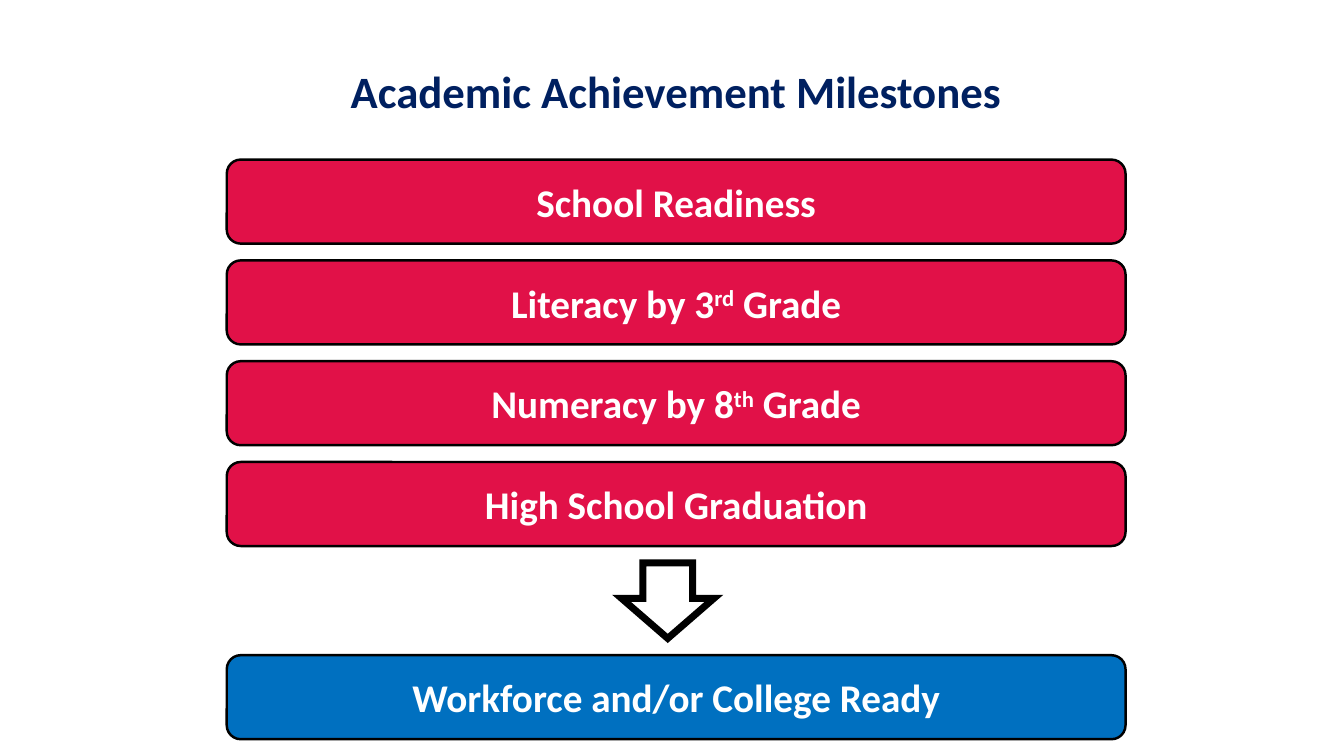
from dataclasses import dataclass

import pptx
import pptx.dml.color
import pptx.enum.shapes
import pptx.enum.text
import pptx.oxml
import pptx.oxml.ns
import pptx.shapes.autoshape
import pptx.slide
import pptx.text.text
import pptx.util

EMU_PER_PX = 9525


@dataclass(frozen=True)
class Theme:
    font: str = "Calibri"
    title_size: int = 32
    bar_size: int = 28
    title_color: str = "002060"
    bar_text: str = "FFFFFF"
    milestone: str = "E11148"
    goal: str = "0070C0"
    outline: str = "000000"
    bar_line: float = 1.75
    arrow_line: float = 5


@dataclass(frozen=True)
class Box:
    left: int
    top: int
    width: int
    height: int

    def emu(self) -> list[int]:
        return [px(value) for value in (self.left, self.top, self.width, self.height)]


@dataclass(frozen=True)
class Bar:
    top: int
    fill: str
    text: str
    ordinal: str = ""
    ending: str = ""


THEME = Theme()

# Column shared by the title and the bars
LEFT, WIDTH = 216, 856
BAR_HEIGHT, FIRST_TOP, STEP = 80, 152, 96
GOAL_TOP = 624
TITLE_BOX = Box(LEFT, 56, WIDTH, 60)
ARROW_BOX = Box(592, 536, 88, 72)

MILESTONES = [
    ("School Readiness",),
    ("Literacy by 3", "rd", " Grade"),
    ("Numeracy by 8", "th", " Grade"),
    ("High School Graduation",),
]
BARS = [
    Bar(FIRST_TOP + index * STEP, THEME.milestone, *words)
    for index, words in enumerate(MILESTONES)
] + [Bar(GOAL_TOP, THEME.goal, "Workforce and/or College Ready")]


def px(value: int) -> int:
    return pptx.util.Emu(value * EMU_PER_PX)


def rgb(color: str) -> pptx.dml.color.RGBColor:
    return pptx.dml.color.RGBColor.from_string(color)


def add_run(paragraph: pptx.text.text._Paragraph, text: str, size: int,
            color: str, baseline: int = 0) -> None:
    run = paragraph.add_run()
    run.text = text
    run.font.name = THEME.font
    run.font.size = pptx.util.Pt(size)
    run.font.bold = True
    run.font.color.rgb = rgb(color)
    if baseline:
        run.font._element.set("baseline", str(baseline * 1000))


def add_outlined_shape(slide: pptx.slide.Slide, kind: pptx.enum.shapes.MSO_SHAPE,
                       box: Box, line_width: float) -> pptx.shapes.autoshape.Shape:
    shape = slide.shapes.add_shape(kind, *box.emu())
    shape.shadow.inherit = False
    shape.line.color.rgb = rgb(THEME.outline)
    shape.line.width = pptx.util.Pt(line_width)
    return shape


def add_title(slide: pptx.slide.Slide) -> None:
    title = slide.shapes.title
    title.left, title.top, title.width, title.height = TITLE_BOX.emu()
    frame = title.text_frame
    frame.word_wrap = True
    frame.auto_size = pptx.enum.text.MSO_AUTO_SIZE.NONE
    frame.vertical_anchor = pptx.enum.text.MSO_ANCHOR.TOP
    paragraph = frame.paragraphs[0]
    paragraph.alignment = pptx.enum.text.PP_ALIGN.CENTER
    add_run(paragraph, "Academic Achievement Milestones",
            THEME.title_size, THEME.title_color)


def add_bar(slide: pptx.slide.Slide, bar: Bar) -> None:
    shape = add_outlined_shape(
        slide, pptx.enum.shapes.MSO_SHAPE.ROUNDED_RECTANGLE,
        Box(LEFT, bar.top, WIDTH, BAR_HEIGHT), THEME.bar_line)
    shape.fill.solid()
    shape.fill.fore_color.rgb = rgb(bar.fill)
    frame = shape.text_frame
    frame.word_wrap = False
    frame.vertical_anchor = pptx.enum.text.MSO_ANCHOR.MIDDLE
    paragraph = frame.paragraphs[0]
    paragraph.alignment = pptx.enum.text.PP_ALIGN.CENTER
    for text, baseline in ((bar.text, 0), (bar.ordinal, 30), (bar.ending, 0)):
        if text:
            add_run(paragraph, text, THEME.bar_size, THEME.bar_text, baseline)


def add_arrow(slide: pptx.slide.Slide) -> None:
    arrow = add_outlined_shape(
        slide, pptx.enum.shapes.MSO_SHAPE.DOWN_ARROW, ARROW_BOX, THEME.arrow_line)
    arrow.fill.background()
    arrow.adjustments[0] = 0.54
    arrow.adjustments[1] = 0.53
    # Sharp corners
    line = arrow.line._get_or_add_ln()
    miter = pptx.oxml.parse_xml(
        f'<a:miter {pptx.oxml.ns.nsdecls("a")} lim="800000"/>')
    line.append(miter)


def main() -> None:
    presentation = pptx.Presentation()
    presentation.slide_width, presentation.slide_height = px(1280), px(720)
    slide = presentation.slides.add_slide(presentation.slide_layouts[5])

    add_title(slide)
    for bar in BARS:
        add_bar(slide, bar)
    add_arrow(slide)

    presentation.save("out.pptx")


if __name__ == "__main__":
    main()
